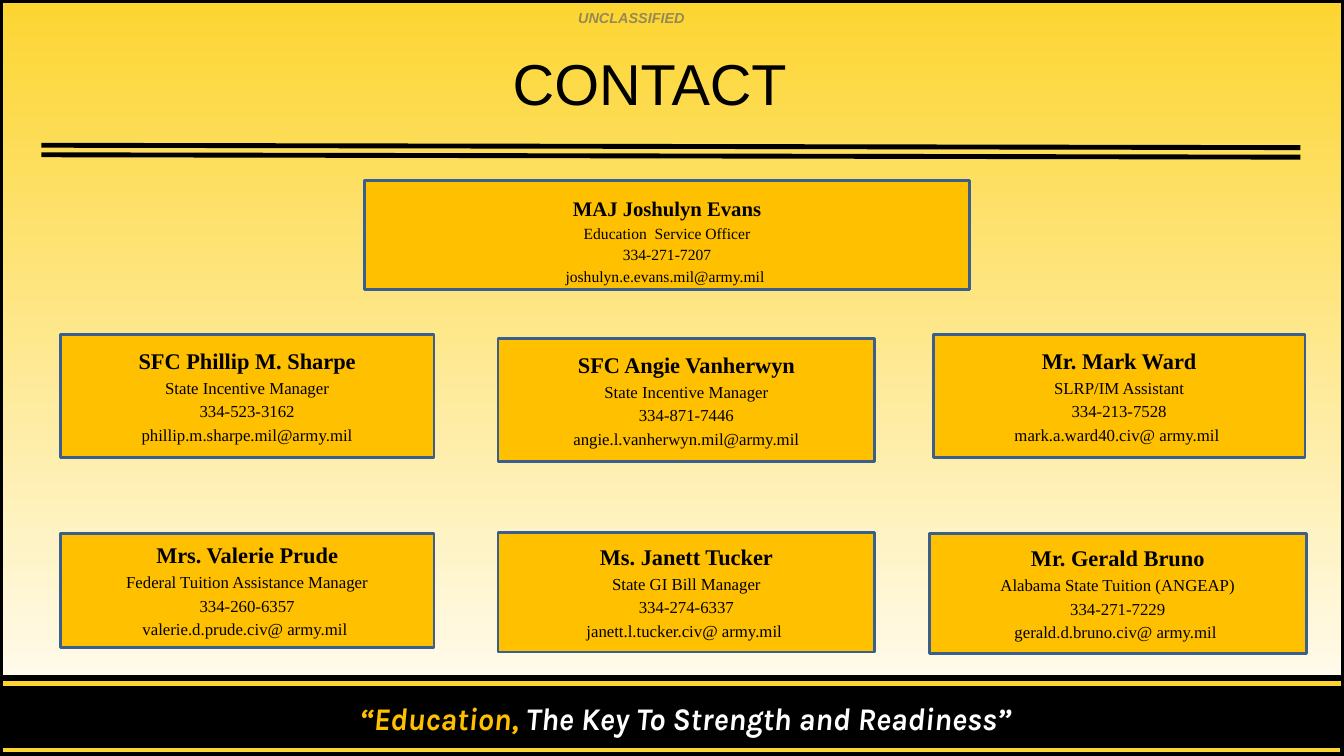
from lxml.etree import SubElement
from pptx import Presentation
from pptx.dml.color import RGBColor
from pptx.enum.shapes import MSO_CONNECTOR, MSO_SHAPE
from pptx.enum.text import MSO_ANCHOR, MSO_AUTO_SIZE, PP_ALIGN
from pptx.oxml.ns import qn
from pptx.util import Cm, Pt

BLACK = RGBColor(0x00, 0x00, 0x00)
WHITE = RGBColor(0xFF, 0xFF, 0xFF)
YELLOW = RGBColor(0xFD, 0xD5, 0x31)
GOLD = RGBColor(0xFF, 0xC0, 0x00)
BLUE = RGBColor(0x3A, 0x5F, 0x8C)
KHAKI = RGBColor(0x94, 0x8A, 0x54)
WIDE, HIGH = 33.87, 19.05

CHIEF = ("MAJ Joshulyn Evans", "Education  Service Officer",
         "334-271-7207", "joshulyn.e.evans.mil@army.mil ")
STAFF = [
    ((1.52, 8.43, 9.42, 3.1),
     ("SFC Phillip M. Sharpe", "State Incentive Manager",
      "334-523-3162", "phillip.m.sharpe.mil@army.mil")),
    ((12.55, 8.53, 9.5, 3.1),
     ("SFC Angie Vanherwyn", "State Incentive Manager",
      "334-871-7446", "angie.l.vanherwyn.mil@army.mil")),
    ((23.52, 8.43, 9.37, 3.1),
     ("Mr. Mark Ward", "SLRP/IM Assistant",
      "334-213-7528", "mark.a.ward40.civ@ army.mil ")),
    ((1.52, 13.44, 9.42, 2.87),
     ("Mrs. Valerie Prude", "Federal Tuition Assistance Manager",
      "334-260-6357", "valerie.d.prude.civ@ army.mil ")),
    ((12.55, 13.41, 9.5, 3.02),
     ("Ms. Janett Tucker", "State GI Bill Manager",
      "334-274-6337", "janett.l.tucker.civ@ army.mil ")),
    ((23.42, 13.44, 9.5, 3.02),
     ("Mr. Gerald Bruno", "Alabama State Tuition (ANGEAP)",
      "334-271-7229", "gerald.d.bruno.civ@ army.mil ")),
]


class Deck:
    """Holds the style and the current slide."""

    def __init__(self):
        self.show = Presentation()
        self.show.slide_width, self.show.slide_height = Cm(WIDE), Cm(HIGH)
        self.slide = self.show.slides.add_slide(self.show.slide_layouts[1])
        self.shapes = self.slide.shapes

    def shade(self, low, high):
        fill = self.slide.background.fill
        fill.gradient()
        fill.gradient_angle = 90
        for stop, color in zip(fill.gradient_stops, (low, high)):
            stop.color.rgb = color
        fill.gradient_stops[0].position = 0
        fill.gradient_stops[1].position = 1

    def place(self, shape, box):
        shape.left, shape.top, shape.width, shape.height = map(Cm, box)

    def font(self, font, name, size, color, bold=False, slant=False):
        font.name, font.size, font.color.rgb = name, Pt(size), color
        font.bold, font.italic = bold, slant

    def paint(self, shape, fill, line, width):
        if fill is None:
            shape.fill.background()
        else:
            shape.fill.solid()
            shape.fill.fore_color.rgb = fill
        shape.line.color.rgb = line
        shape.line.width = Pt(width)

    def rect(self, box, fill, line, width):
        shape = self.shapes.add_shape(MSO_SHAPE.RECTANGLE, *map(Cm, box))
        shape.shadow.inherit = False
        self.paint(shape, fill, line, width)
        return shape

    def line(self, ends, color):
        line = self.shapes.add_connector(MSO_CONNECTOR.STRAIGHT, *map(Cm, ends))
        line.line.color.rgb = color
        line.line.width = Pt(3.5)
        SubElement(line._element.spPr, qn("a:effectLst"))

    def title(self, text, box):
        title = self.shapes.title
        self.place(title, box)
        frame = title.text_frame
        frame.text = text
        frame.auto_size = MSO_AUTO_SIZE.NONE
        frame.vertical_anchor = MSO_ANCHOR.MIDDLE
        para = frame.paragraphs[0]
        para.alignment = PP_ALIGN.CENTER
        self.font(para.font, "Arial", 41.2, BLACK)

    def label(self, box, parts, name, size):
        frame = self.shapes.add_textbox(*map(Cm, box)).text_frame
        frame.word_wrap = False
        para = frame.paragraphs[0]
        para.alignment = PP_ALIGN.CENTER
        for text, color in parts:
            run = para.add_run()
            run.text = text
            self.font(run.font, name, size, color, True, True)

    def fill(self, shape, rows, head, size):
        frame = shape.text_frame
        frame.text = "\n".join(rows)
        frame.word_wrap = True
        frame.auto_size = MSO_AUTO_SIZE.NONE
        frame.vertical_anchor = MSO_ANCHOR.MIDDLE
        for i, para in enumerate(frame.paragraphs):
            para.alignment = PP_ALIGN.CENTER
            para.space_before = Pt(round(size * 0.2, 1) if i else 0)
            props = para._p.get_or_add_pPr()
            props.set("marL", "0")
            props.set("indent", "0")
            SubElement(props, qn("a:buNone"))
            self.font(para.font, "Times New Roman", size if i else head, BLACK, i == 0)

    def card(self, box, rows):
        self.fill(self.rect(box, GOLD, BLUE, 2), rows, 16, 12)

    def lead(self, box, rows):
        body = self.slide.placeholders[1]
        self.place(body, box)
        self.paint(body, GOLD, BLUE, 2)
        self.fill(body, rows, 14.8, 11.1)
        body.text_frame.vertical_anchor = MSO_ANCHOR.TOP
        body.text_frame.margin_top = Cm(0.38)


def main():
    deck = Deck()
    deck.shade(WHITE, YELLOW)
    deck.rect((-0.08, 17.04, WIDE, 1.9), BLACK, BLACK, 2)
    deck.label((14.3, 0.1, 3.23, 0.69), [("UNCLASSIFIED", KHAKI)], "Arial", 10.3)
    deck.label((7.26, 17.5, 20.04, 1.22),
               [("“Education, ", GOLD), ("The Key To Strength and Readiness”", WHITE)],
               "Karla", 22.5)
    deck.line((-0.03, 17.22, WIDE, 17.22), YELLOW)
    deck.line((-0.1, 18.9, 33.78, 18.9), YELLOW)
    deck.rect((0, 0, WIDE, HIGH), None, BLACK, 4.75)
    for top in (3.66, 3.9):
        deck.line((1.04, top, 32.77, top + 0.06), BLACK)
    deck.title("CONTACT", (4.6, 0.94, 23.55, 2.29))
    deck.lead((9.19, 4.55, 15.24, 2.74), CHIEF)
    for box, rows in STAFF:
        deck.card(box, rows)
    deck.show.save("out.pptx")


if __name__ == "__main__":
    main()
